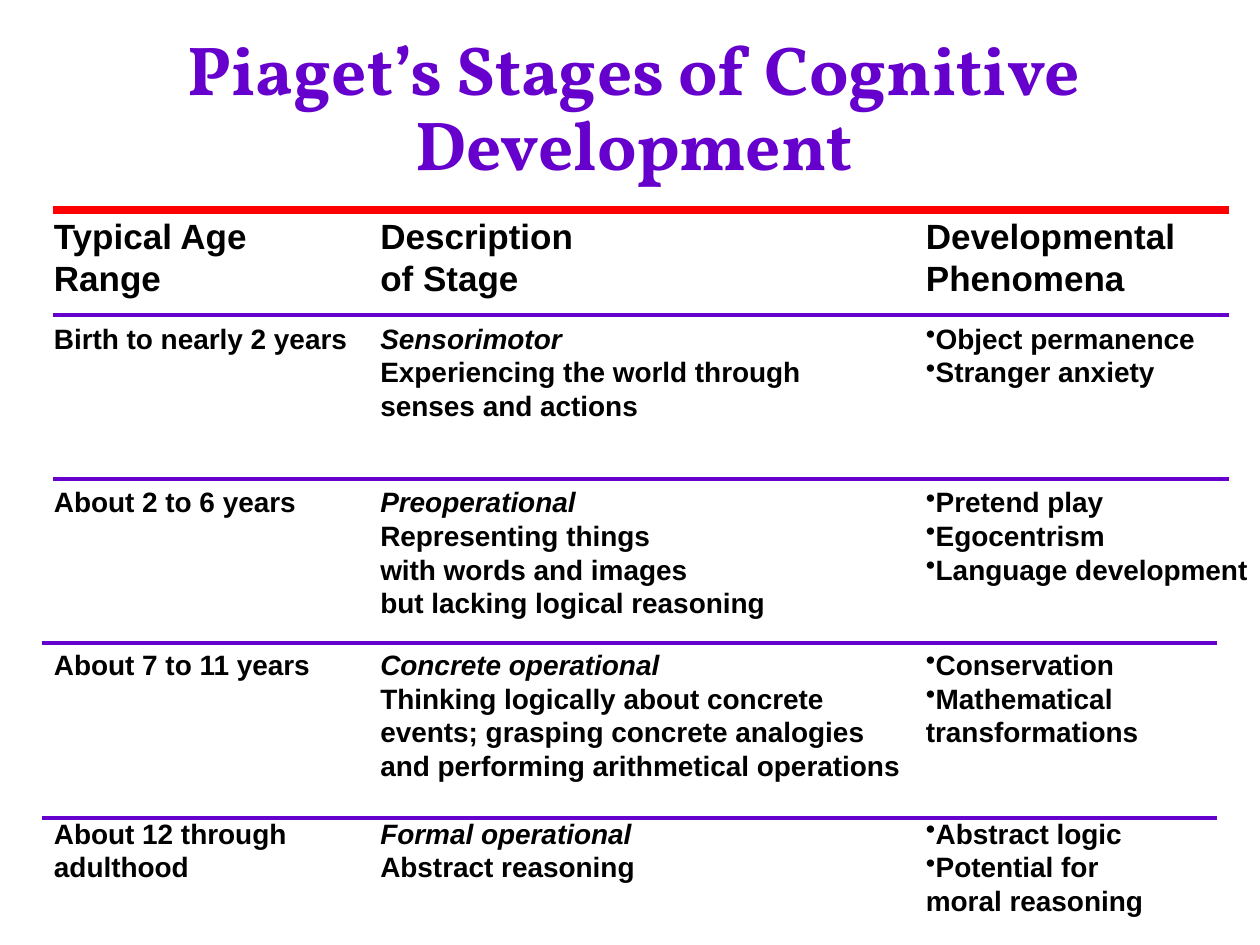
from lxml.etree import SubElement
from pptx import Presentation
from pptx.dml.color import RGBColor
from pptx.enum.shapes import MSO_CONNECTOR
from pptx.enum.text import MSO_ANCHOR, MSO_AUTO_SIZE, PP_ALIGN
from pptx.oxml.ns import qn
from pptx.util import Inches, Pt

PURPLE = RGBColor(0x66, 0x00, 0xCC)
RED = RGBColor(0xFF, 0x00, 0x00)
BLACK = RGBColor(0x00, 0x00, 0x00)

TITLE = "Piaget’s Stages of Cognitive Development"
COLUMN_LEFTS = (0.33, 2.92, 7.25)
WRAPPED_WIDTH = 2.0  # cells of this width wrap their last paragraph

# Each cell: width, paragraphs
HEADER = [
    (1.84, ["Typical Age", "Range"]),
    (1.81, ["Description", "of Stage"]),
    (2.25, ["Developmental", "Phenomena"]),
]
# Each stage: top, then age range, description, phenomena
STAGES = [
    (2.5, [
        (2.54, ["Birth to nearly 2 years"]),
        (3.59, ["Sensorimotor", "Experiencing the world through",
                "senses and actions"]),
        (2.34, ["Object permanence", "Stranger anxiety"]),
    ]),
    (3.8, [
        (2.13, ["About 2 to 6 years"]),
        (3.27, ["Preoperational", "Representing things",
                "with words and images", "but lacking logical reasoning"]),
        (2.76, ["Pretend play", "Egocentrism", "Language development"]),
    ]),
    (5.09, [
        (2.25, ["About 7 to 11 years"]),
        (4.34, ["Concrete operational", "Thinking logically about concrete",
                "events; grasping concrete analogies",
                "and performing arithmetical operations"]),
        (WRAPPED_WIDTH, ["Conservation", "Mathematical transformations"]),
    ]),
    (6.43, [
        (2.11, ["About 12 through", "adulthood"]),
        (2.23, ["Formal operational", "Abstract reasoning"]),
        (WRAPPED_WIDTH, ["Abstract logic", "Potential for moral reasoning"]),
    ]),
]
# Each rule: left, y, colour, weight
RULE_LENGTH = 9.33
RULES = [
    (0.42, 1.67, RED, 4.5),
    (0.42, 2.5, PURPLE, 2.25),
    (0.42, 3.8, PURPLE, 2.25),
    (0.33, 5.1, PURPLE, 2.25),
    (0.33, 6.49, PURPLE, 2.25),
]


def write(paragraph, text, size, font="Arial", color=BLACK, italic=None, bullet=False):
    run = paragraph.add_run()
    run.text = text
    run.font.size = Pt(size)
    run.font.name = font
    run.font.bold = True
    run.font.italic = italic
    run.font.color.rgb = color
    if bullet:
        properties = paragraph._p.get_or_add_pPr()
        SubElement(properties, qn("a:buChar")).set("char", "•")


def add_cell(slide, left, top, width, texts, size=16, lead_italic=False, bullet=False):
    wrapped = width == WRAPPED_WIDTH
    line_height = 0.3 if size == 16 else 0.375
    height = 0.1 + line_height * (len(texts) + wrapped)
    box = slide.shapes.add_textbox(Inches(left), Inches(top), Inches(width), Inches(height))
    frame = box.text_frame
    frame.word_wrap = wrapped
    frame.auto_size = MSO_AUTO_SIZE.SHAPE_TO_FIT_TEXT
    for index, text in enumerate(texts):
        paragraph = frame.add_paragraph() if index else frame.paragraphs[0]
        write(paragraph, text, size, italic=lead_italic and index == 0, bullet=bullet)


def add_rule(slide, left, y, color, weight):
    rule = slide.shapes.add_connector(
        MSO_CONNECTOR.STRAIGHT, Inches(left), Inches(y), Inches(left + RULE_LENGTH), Inches(y))
    rule.line.color.rgb = color
    rule.line.width = Pt(weight)
    SubElement(rule._element.spPr, qn("a:effectLst"))


def main():
    presentation = Presentation()
    presentation.slide_width, presentation.slide_height = Inches(10), Inches(7.5)
    slide = presentation.slides.add_slide(presentation.slide_layouts[5])

    # Title
    title = slide.shapes.title
    title.left, title.top = Inches(0.25), Inches(0.25)
    title.width, title.height = Inches(9.56), Inches(1.25)
    title.text_frame.word_wrap = True
    title.text_frame.auto_size = MSO_AUTO_SIZE.NONE
    title.text_frame.vertical_anchor = MSO_ANCHOR.MIDDLE
    heading = title.text_frame.paragraphs[0]
    heading.alignment = PP_ALIGN.CENTER
    heading.line_spacing = 0.9
    write(heading, TITLE, 39.6, font="Vollkorn", color=PURPLE)

    # Rules between the rows
    for rule in RULES:
        add_rule(slide, *rule)

    # Column headings
    for left, (width, texts) in zip(COLUMN_LEFTS, HEADER):
        add_cell(slide, left, 1.65, width, texts, size=20)

    # Stages
    for top, cells in STAGES:
        for column, (left, (width, texts)) in enumerate(zip(COLUMN_LEFTS, cells)):
            add_cell(slide, left, top, width, texts,
                     lead_italic=column == 1, bullet=column == 2)

    presentation.save("out.pptx")


if __name__ == "__main__":
    main()
